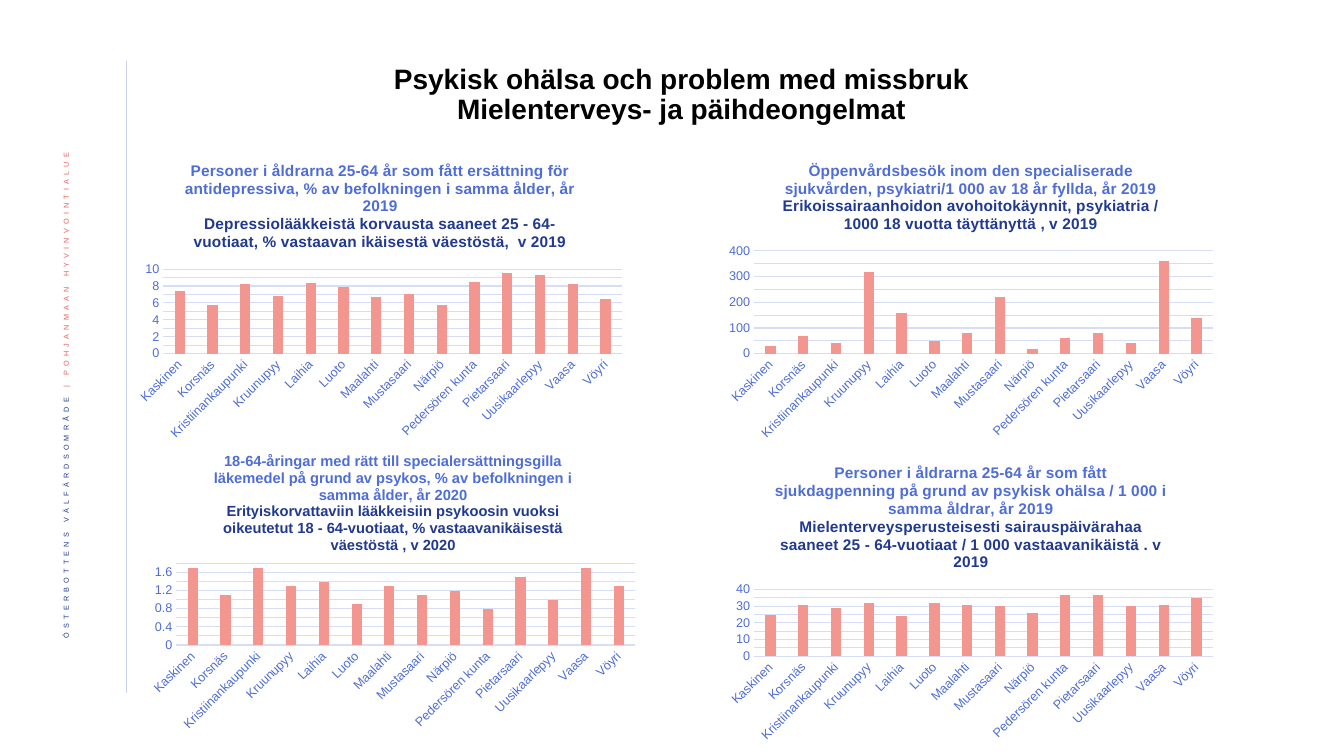
"""Build the slide on mental health and substance abuse with four column charts."""
from copy import deepcopy
from dataclasses import dataclass

from lxml.etree import SubElement
from pptx import Presentation
from pptx.chart.data import CategoryChartData
from pptx.dml.color import RGBColor
from pptx.enum.chart import XL_CHART_TYPE, XL_TICK_MARK
from pptx.enum.shapes import MSO_CONNECTOR
from pptx.enum.text import MSO_ANCHOR, PP_ALIGN
from pptx.oxml import parse_xml
from pptx.oxml.ns import nsdecls, qn
from pptx.util import Inches, Pt


@dataclass(frozen=True)
class Theme:
    font: str = "Arial"
    black: str = "000000"
    navy: str = "213A8F"
    blue: str = "4F6DD6"
    coral: str = "EB5C5F"
    bar: str = "F39690"
    grid: str = "D6DDF6"
    rule: str = "C9D2F2"
    title_size: float = 20
    side_size: float = 9
    chart_size: float = 10
    axis_size: float = 9
    heading_size: float = 11
    small_heading_size: float = 10.5


theme = Theme()


def add_span(para, text, *, size, color, bold=False, spacing=None, baseline=None):
    span = para.add_run()
    span.text = text
    span.font.name = theme.font
    span.font.size = Pt(size)
    span.font.bold = bold
    span.font.color.rgb = RGBColor.from_string(color)
    if spacing is not None:
        span.font._element.set("spc", str(spacing))
    if baseline is not None:
        span.font._element.set("baseline", str(baseline))


def set_line(line, color, width):
    line.color.rgb = RGBColor.from_string(color)
    line.width = Pt(width)


deck = Presentation()
deck.slide_width = Inches(13.33)
deck.slide_height = Inches(7.5)
page = deck.slides.add_slide(deck.slide_layouts[6])

rule = page.shapes.add_connector(
    MSO_CONNECTOR.STRAIGHT, Inches(1.25), Inches(0.61), Inches(1.25), Inches(6.88))
set_line(rule.line, theme.rule, 0.5)
SubElement(rule._element.spPr, qn("a:effectLst"))

side_box = page.shapes.add_textbox(Inches(0.42), Inches(1.42), Inches(0.52), Inches(5.73))
side_frame = side_box.text_frame
side_frame.word_wrap = True
side_frame.vertical_anchor = MSO_ANCHOR.MIDDLE
side_frame._txBody.bodyPr.set("vert", "vert270")
side_para = side_frame.paragraphs[0]
side_para.alignment = PP_ALIGN.RIGHT
side_para.line_spacing = 0.9
for text, color in (("ÖSTERBOTTENS VÄLFÄRDSOMRÅDE ", theme.navy),
                    ("| POHJANMAAN HYVINVOINTIALUE", theme.coral)):
    add_span(side_para, text, size=theme.side_size, color=color, spacing=300, baseline=30000)

title_box = page.shapes.add_textbox(Inches(1.77), Inches(0.45), Inches(9.98), Inches(0.99))
title_frame = title_box.text_frame
title_frame.word_wrap = True
title_frame.vertical_anchor = MSO_ANCHOR.MIDDLE
title_para = title_frame.paragraphs[0]
title_para.alignment = PP_ALIGN.CENTER
title_para.line_spacing = 0.9
for number, text in enumerate(("Psykisk ohälsa och problem med missbruk",
                               "Mielenterveys- ja päihdeongelmat")):
    if number:
        title_para.add_line_break()
    add_span(title_para, text, size=theme.title_size, color=theme.black, bold=True)

towns = ("Kaskinen", "Korsnäs", "Kristiinankaupunki", "Kruunupyy", "Laihia", "Luoto", "Maalahti",
         "Mustasaari", "Närpiö", "Pedersören kunta", "Pietarsaari", "Uusikaarlepyy", "Vaasa", "Vöyri")

charts = (
    dict(left=1.27, top=1.44, size=theme.heading_size, maximum=10, step=2,
         plot_top=0.41, plot_height=0.28,
         swedish="Personer i åldrarna 25-64 år som fått ersättning för antidepressiva, "
                 "% av befolkningen i samma ålder, år 2019",
         finnish="Depressiolääkkeistä korvausta saaneet 25 - 64-vuotiaat, "
                 "% vastaavan ikäisestä väestöstä,  v 2019",
         values=(7.4, 5.8, 8.2, 6.8, 8.3, 7.9, 6.7, 7, 5.8, 8.5, 9.5, 9.3, 8.2, 6.5)),
    dict(left=7.13, top=1.44, size=theme.heading_size, maximum=400, step=100,
         plot_top=0.35, plot_height=0.34,
         swedish="Öppenvårdsbesök inom den specialiserade sjukvården, "
                 "psykiatri/1 000 av 18 år fyllda, år 2019",
         finnish="Erikoissairaanhoidon avohoitokäynnit, "
                 "psykiatria / 1000 18 vuotta täyttänyttä , v 2019",
         values=(30, 70, 40, 320, 160, 50, 80, 220, 20, 60, 80, 40, 360, 140)),
    dict(left=7.13, top=4.44, size=theme.heading_size, maximum=40, step=10,
         plot_top=0.47, plot_height=0.22,
         swedish="Personer i åldrarna 25-64 år som fått sjukdagpenning på grund av "
                 "psykisk ohälsa / 1 000 i samma åldrar, år 2019",
         finnish="Mielenterveysperusteisesti sairauspäivärahaa saaneet "
                 "25 - 64-vuotiaat / 1 000 vastaavanikäistä . v 2019",
         values=(25, 31, 29, 32, 24, 32, 31, 30, 26, 37, 37, 30, 31, 35)),
    dict(left=1.4, top=4.33, size=theme.small_heading_size, maximum=1.8, step=0.4,
         plot_top=0.42, plot_height=0.27,
         swedish="18-64-åringar med rätt till specialersättningsgilla läkemedel på grund av "
                 "psykos, % av befolkningen i samma ålder, år 2020",
         finnish="Erityiskorvattaviin lääkkeisiin psykoosin vuoksi oikeutetut "
                 "18 - 64-vuotiaat, % vastaavanikäisestä väestöstä , v 2020",
         values=(1.7, 1.1, 1.7, 1.3, 1.4, 0.9, 1.3, 1.1, 1.2, 0.8, 1.5, 1, 1.7, 1.3)),
)

for item in charts:
    data = CategoryChartData(number_format="General")
    data.categories = towns
    data.add_series("Series 1", item["values"])
    chart = page.shapes.add_chart(
        XL_CHART_TYPE.COLUMN_CLUSTERED, Inches(item["left"]), Inches(item["top"]),
        Inches(5), Inches(3), data).chart
    chart.has_legend = False
    chart.font.name = theme.font
    chart.font.size = Pt(theme.chart_size)
    chart.font.color.rgb = RGBColor.from_string(theme.navy)

    heading = chart.chart_title.text_frame
    for para, text, color in ((heading.paragraphs[0], item["swedish"], theme.blue),
                              (heading.add_paragraph(), item["finnish"], theme.navy)):
        para.alignment = PP_ALIGN.CENTER
        add_span(para, text, size=item["size"], color=color, bold=True)
    chart.chart_title.include_in_layout = False

    plot = chart.plots[0]
    plot.gap_width = 219
    plot.overlap = -27
    plot.vary_by_categories = False
    bars = plot.series[0].format.fill
    bars.solid()
    bars.fore_color.rgb = RGBColor.from_string(theme.bar)

    for axis in (chart.category_axis, chart.value_axis):
        axis.major_tick_mark = XL_TICK_MARK.NONE
        axis.minor_tick_mark = XL_TICK_MARK.NONE
        axis.tick_labels.font.name = theme.font
        axis.tick_labels.font.size = Pt(theme.axis_size)
        axis.tick_labels.font.color.rgb = RGBColor.from_string(theme.blue)
    set_line(chart.category_axis.format.line, theme.grid, 0.75)
    labels = chart.category_axis._element.find(qn("c:txPr"))
    labels.find(qn("a:bodyPr")).set("rot", "-2700000")

    scale = chart.value_axis
    scale.format.line.fill.background()
    scale.minimum_scale = 0
    scale.maximum_scale = item["maximum"]
    scale.major_unit = item["step"]
    scale.minor_unit = item["step"] / 2
    set_line(scale.major_gridlines.format.line, theme.grid, 0.75)
    major_lines = scale._element.find(qn("c:majorGridlines"))
    minor_lines = deepcopy(major_lines)
    minor_lines.tag = qn("c:minorGridlines")
    major_lines.addnext(minor_lines)

    area = chart._chartSpace.chart.plotArea
    for old_layout in area.findall(qn("c:layout")):
        area.remove(old_layout)
    area.insert(0, parse_xml(
        f'<c:layout {nsdecls("c")}><c:manualLayout><c:layoutTarget val="inner"/>'
        f'<c:xMode val="edge"/><c:yMode val="edge"/><c:x val="0.07"/><c:y val="{item["plot_top"]}"/>'
        f'<c:w val="0.91"/><c:h val="{item["plot_height"]}"/></c:manualLayout></c:layout>'))

deck.save("out.pptx")
